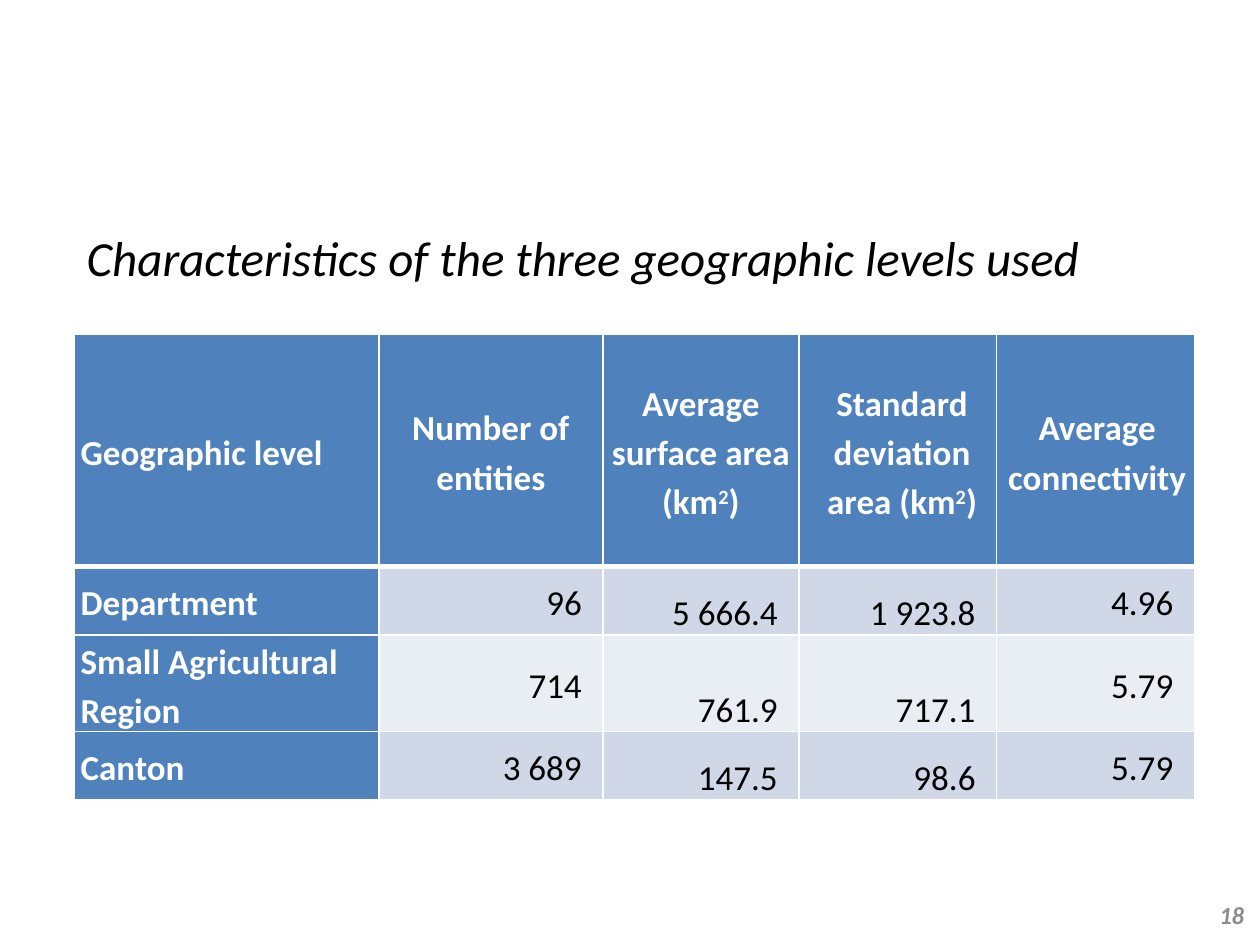
"""Build a slide with a table describing three geographic levels."""
from lxml import etree
from pptx import Presentation
from pptx.dml.color import RGBColor
from pptx.enum.text import MSO_ANCHOR, PP_ALIGN
from pptx.oxml.ns import qn
from pptx.util import Pt

LEFT, CENTER, RIGHT = PP_ALIGN.LEFT, PP_ALIGN.CENTER, PP_ALIGN.RIGHT
TOP, MIDDLE, BOTTOM = MSO_ANCHOR.TOP, MSO_ANCHOR.MIDDLE, MSO_ANCHOR.BOTTOM

WHITE = RGBColor(0xFF, 0xFF, 0xFF)
BLACK = RGBColor(0x00, 0x00, 0x00)
GRAY = RGBColor(0x8C, 0x8C, 0x8C)
BLUE = RGBColor(0x4F, 0x81, 0xBD)
BANDS = (RGBColor(0xD0, 0xD8, 0xE8), RGBColor(0xE9, 0xED, 0xF4))

FONT = "Calibri"
COLUMN_WIDTHS = (174, 128, 112, 113, 113)
ROW_HEIGHTS = (133, 39, 39, 39)
HEADER_INDENTS = (0, 0, 0, 5, 2)
NUMBER_RIGHT_INSET = 12
ROWS = (
    ("Geographic level", "Number of entities", "Average surface area (km^2^)",
     "Standard deviation area (km^2^)", "Average connectivity"),
    ("Department", "96", "5 666.4", "1 923.8", "4.96"),
    ("Small Agricultural Region", "714", "761.9", "717.1", "5.79"),
    ("Canton", "3 689", "147.5", "98.6", "5.79"),
)


def style_font(font, size, color, bold=False, italic=False):
    """Apply the typeface, size, colour and emphasis."""
    font.name, font.size = FONT, Pt(size)
    font.bold, font.italic = bold, italic
    font.color.rgb = color


def add_label(page, text, bounds, size, color, align, anchor, bold=False):
    """Add an italic text box."""
    box = page.shapes.add_textbox(*(Pt(length) for length in bounds))
    frame = box.text_frame
    frame.word_wrap = True
    frame.vertical_anchor = anchor
    frame.text = text
    para = frame.paragraphs[0]
    para.alignment = align
    style_font(para.runs[0].font, size, color, bold, italic=True)


def set_borders(cell, top, bottom):
    """Draw white cell borders with the given top and bottom widths."""
    properties = cell._tc.get_or_add_tcPr()
    for side, width in (("L", 1), ("R", 1), ("T", top), ("B", bottom)):
        line = etree.SubElement(properties, qn(f"a:ln{side}"), w=str(Pt(width)))
        fill = etree.SubElement(line, qn("a:solidFill"))
        etree.SubElement(fill, qn("a:srgbClr"), val=str(WHITE))


def fill_cell(cell, text, row, column):
    """Write and style one cell according to its role in the table."""
    is_header, is_label = row == 0, column == 0
    is_number = not (is_header or is_label)
    set_borders(cell, top=3 if row == 1 else 1, bottom=3 if is_header else 1)
    cell.fill.solid()
    cell.fill.fore_color.rgb = BANDS[(row - 1) % 2] if is_number else BLUE
    cell.margin_left = Pt(3.6)
    cell.margin_right = Pt(NUMBER_RIGHT_INSET if is_number else 3.6)
    cell.margin_top = cell.margin_bottom = Pt(0)
    cell.vertical_anchor = BOTTOM if is_number and column in (2, 3) else MIDDLE

    para = cell.text_frame.paragraphs[0]
    para.alignment = LEFT if is_label else CENTER if is_header else RIGHT
    para.line_spacing = 1.15
    if is_header and HEADER_INDENTS[column]:
        para._p.get_or_add_pPr().set("marL", str(Pt(HEADER_INDENTS[column])))
    for index, part in enumerate(text.split("^")):
        span = para.add_run()
        span.text = part
        style_font(span.font, 20, BLACK if is_number else WHITE, not is_number)
        if index % 2:
            span.font._element.set("baseline", "30000")


def add_level_table(page):
    """Add the table of geographic levels."""
    frame = page.shapes.add_table(
        len(ROWS), len(COLUMN_WIDTHS), Pt(42.5), Pt(190.8),
        Pt(sum(COLUMN_WIDTHS)), Pt(sum(ROW_HEIGHTS)))
    table = frame.table
    for column, width in zip(table.columns, COLUMN_WIDTHS):
        column.width = Pt(width)
    for row, height in zip(table.rows, ROW_HEIGHTS):
        row.height = Pt(height)
    for row, texts in enumerate(ROWS):
        for column, text in enumerate(texts):
            fill_cell(table.cell(row, column), text, row, column)


def main():
    """Build and save the slide."""
    deck = Presentation()
    deck.slide_width, deck.slide_height = Pt(720), Pt(540)
    page = deck.slides.add_slide(deck.slide_layouts[6])
    add_label(page, "18", (550, 508.5, 168, 28.8), 14, GRAY, RIGHT, MIDDLE, bold=True)
    add_level_table(page)
    add_label(page, "Characteristics of the three geographic levels used",
              (42.5, 126.7, 595.5, 41), 28, BLACK, LEFT, TOP)
    deck.save("out.pptx")


if __name__ == "__main__":
    main()
